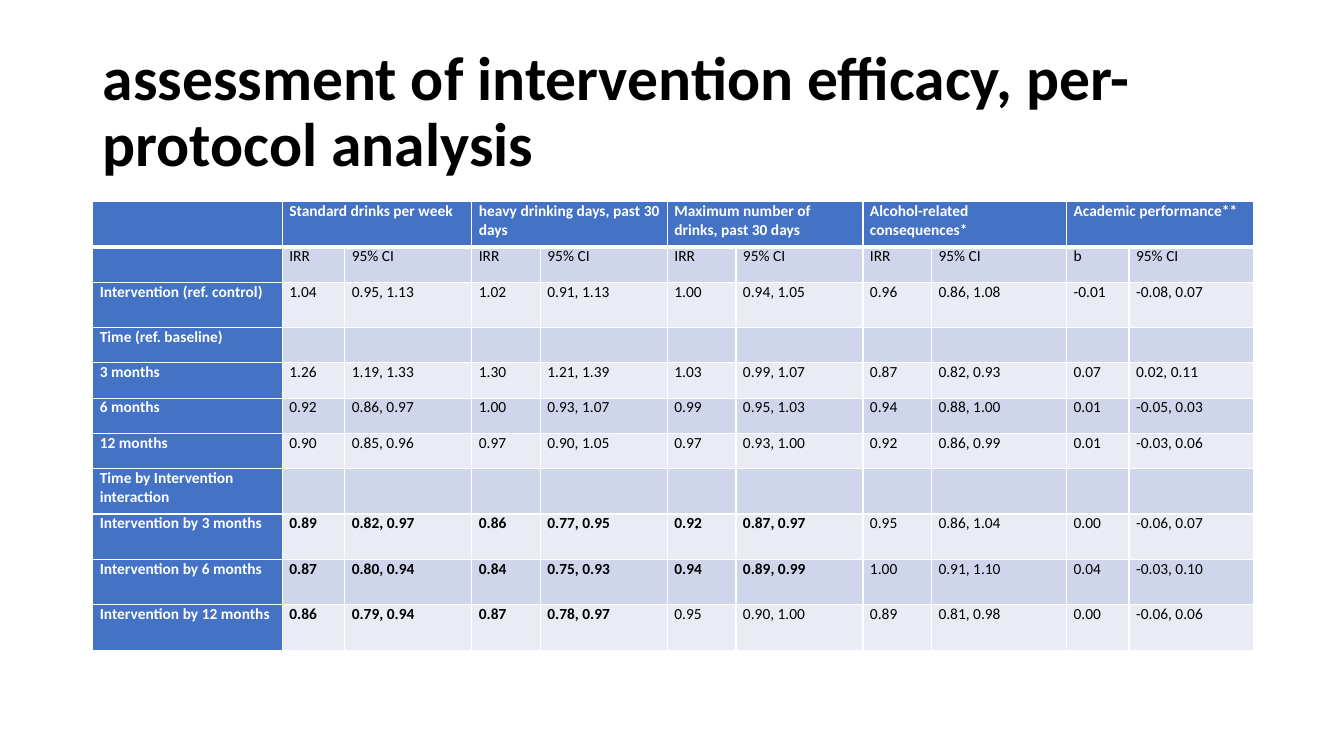
from lxml.etree import SubElement
from pptx import Presentation
from pptx.dml.color import RGBColor
from pptx.enum.text import MSO_ANCHOR
from pptx.oxml.ns import qn
from pptx.util import Inches, Pt

COLORS = {"blue": "4472C4", "dark_band": "CFD5EA", "light_band": "E9EBF5",
          "white": "FFFFFF", "black": "000000"}
FONT = "Calibri"
COLUMN_WIDTHS = [1.88, 0.62, 1.26, 0.68, 1.26, 0.68, 1.26, 0.68, 1.34, 0.62, 1.23]
ROW_HEIGHTS = [0.45, 0.35, 0.45, 0.35, 0.35, 0.35, 0.35, 0.45, 0.45, 0.45, 0.45]
OUTCOMES = ["Standard drinks per week", "heavy drinking days, past 30 days",
            "Maximum number of drinks, past 30 days",
            "Alcohol-related consequences*", "Academic performance**"]

# Row label, estimate and interval for each outcome, number of bold outcomes
RESULTS = [
    ("", ["IRR", "95% CI"] * 4 + ["b", "95% CI"], 0),
    ("Intervention (ref. control)",
     ["1.04", "0.95, 1.13", "1.02", "0.91, 1.13", "1.00", "0.94, 1.05",
      "0.96", "0.86, 1.08", "-0.01", "-0.08, 0.07"], 0),
    ("Time (ref. baseline)", [""] * 10, 0),
    ("3 months",
     ["1.26", "1.19, 1.33", "1.30", "1.21, 1.39", "1.03", "0.99, 1.07",
      "0.87", "0.82, 0.93", "0.07", "0.02, 0.11"], 0),
    ("6 months",
     ["0.92", "0.86, 0.97", "1.00", "0.93, 1.07", "0.99", "0.95, 1.03",
      "0.94", "0.88, 1.00", "0.01", "-0.05, 0.03"], 0),
    ("12 months",
     ["0.90", "0.85, 0.96", "0.97", "0.90, 1.05", "0.97", "0.93, 1.00",
      "0.92", "0.86, 0.99", "0.01", "-0.03, 0.06"], 0),
    ("Time by Intervention interaction", [""] * 10, 0),
    ("Intervention by 3 months",
     ["0.89", "0.82, 0.97", "0.86", "0.77, 0.95", "0.92", "0.87, 0.97",
      "0.95", "0.86, 1.04", "0.00", "-0.06, 0.07"], 3),
    ("Intervention by 6 months",
     ["0.87", "0.80, 0.94", "0.84", "0.75, 0.93", "0.94", "0.89, 0.99",
      "1.00", "0.91, 1.10", "0.04", "-0.03, 0.10"], 3),
    ("Intervention by 12 months",
     ["0.86", "0.79, 0.94", "0.87", "0.78, 0.97", "0.95", "0.90, 1.00",
      "0.89", "0.81, 0.98", "0.00", "-0.06, 0.06"], 2),
]


def add_span(para, text, size, color, bold):
    span = para.add_run()
    span.text = text
    span.font.name = FONT
    span.font.size = Pt(size)
    span.font.bold = bold
    span.font.color.rgb = RGBColor.from_string(COLORS[color])


def add_title(page, text):
    box = page.shapes.add_textbox(Inches(0.92), Inches(0.4), Inches(11.5), Inches(1.45))
    frame = box.text_frame
    frame.word_wrap = True
    frame.vertical_anchor = MSO_ANCHOR.MIDDLE
    para = frame.paragraphs[0]
    para.line_spacing = 0.9
    add_span(para, text, 44, "black", True)


def add_borders(cell, top, bottom):
    properties = cell._tc.get_or_add_tcPr()
    for side, width in (("L", 1), ("R", 1), ("T", top), ("B", bottom)):
        line = SubElement(properties, qn(f"a:ln{side}"), w=str(Pt(width)))
        fill = SubElement(line, qn("a:solidFill"))
        SubElement(fill, qn("a:srgbClr"), val=COLORS["white"])


def style_cell(cell, fill, top=1, bottom=1):
    cell.margin_left = cell.margin_right = Inches(0.07)
    cell.margin_top = cell.margin_bottom = 0
    add_borders(cell, top, bottom)
    cell.fill.solid()
    cell.fill.fore_color.rgb = RGBColor.from_string(COLORS[fill])


def write_cell(cell, text, color, bold):
    para = cell.text_frame.paragraphs[0]
    if text:
        add_span(para, text, 11, color, bold)
    else:
        para.font.size = Pt(11)


def add_results_table(page):
    table = page.shapes.add_table(
        len(ROW_HEIGHTS), len(COLUMN_WIDTHS), Inches(0.92), Inches(2),
        Inches(11.5), Inches(4.47)).table
    table.first_row = table.horz_banding = False
    for column, width in zip(table.columns, COLUMN_WIDTHS):
        column.width = Inches(width)
    for row, height in zip(table.rows, ROW_HEIGHTS):
        row.height = Inches(height)

    # Header: each outcome spans its estimate and interval columns
    for cell in table.rows[0].cells:
        style_cell(cell, "blue", bottom=3)
    for index, outcome in enumerate(OUTCOMES):
        left = 1 + 2 * index
        table.cell(0, left).merge(table.cell(0, left + 1))
        write_cell(table.cell(0, left), outcome, "white", True)

    # Body: blue label column and banded values
    for row, (label, values, bold_outcomes) in enumerate(RESULTS, start=1):
        band = "dark_band" if row % 2 else "light_band"
        top = 3 if row == 1 else 1
        style_cell(table.cell(row, 0), "blue", top)
        write_cell(table.cell(row, 0), label, "white", True)
        for column, value in enumerate(values, start=1):
            cell = table.cell(row, column)
            style_cell(cell, band, top)
            write_cell(cell, value, "black", column <= 2 * bold_outcomes)


def main():
    deck = Presentation()
    deck.slide_width = Inches(13.33)
    deck.slide_height = Inches(7.5)
    page = deck.slides.add_slide(deck.slide_layouts[6])
    add_title(page, "assessment of intervention efficacy, per-protocol analysis")
    add_results_table(page)
    deck.save("out.pptx")


if __name__ == "__main__":
    main()
